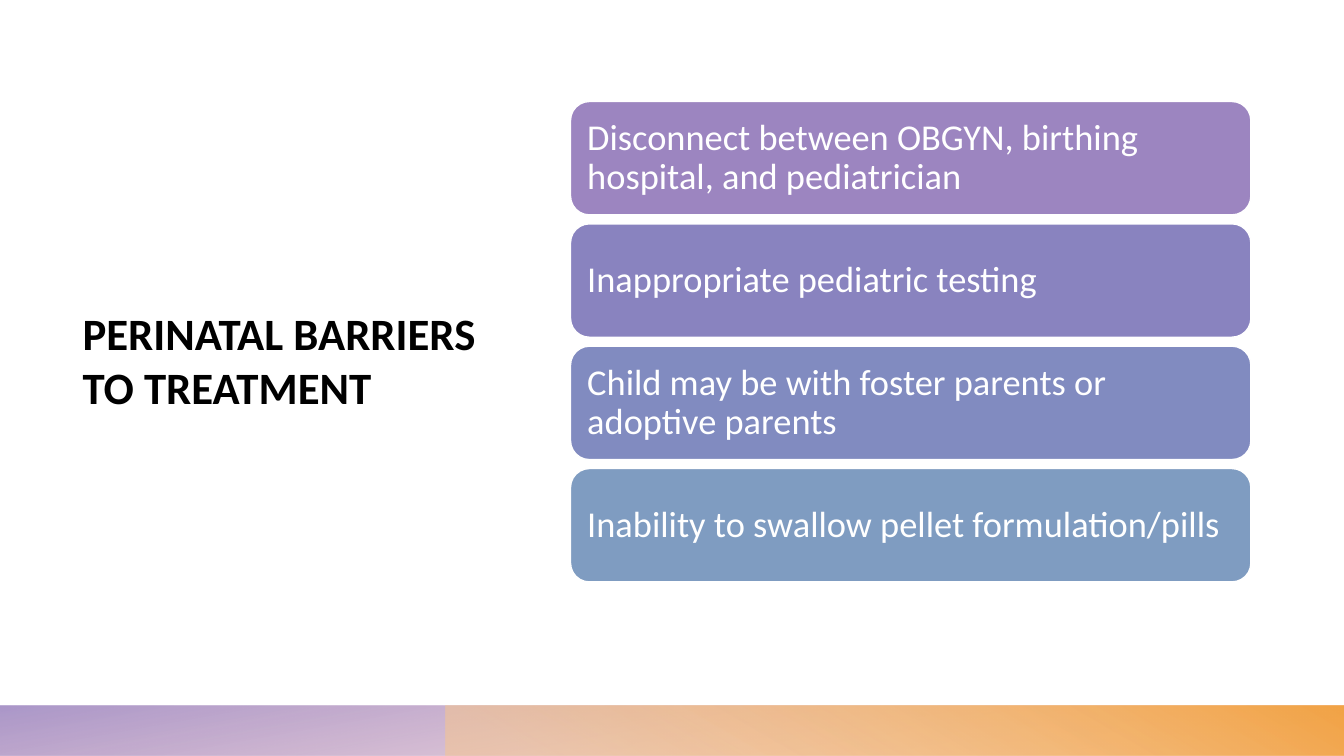
from lxml import etree
from pptx import Presentation
from pptx.dml.color import RGBColor
from pptx.enum.shapes import MSO_SHAPE
from pptx.enum.text import MSO_ANCHOR, MSO_AUTO_SIZE, PP_ALIGN
from pptx.oxml.ns import qn
from pptx.util import Pt

COLORS = {
    "black": "000000", "white": "FFFFFF",
    "pink": "D092A7", "purple": "9C85C0", "peach": "F8C78E", "orange": "F3A447",
    "violet": "8983BF", "periwinkle": "818BC0", "blue": "7F9CC1",
}


def write_text(frame, text, size, color, bold=False, inset=0, spacing=1.0):
    frame.word_wrap = True
    frame.auto_size = MSO_AUTO_SIZE.NONE
    frame.vertical_anchor = MSO_ANCHOR.MIDDLE
    frame.margin_left = frame.margin_right = Pt(inset)
    frame.margin_top = frame.margin_bottom = Pt(inset)
    paragraph = frame.paragraphs[0]
    paragraph.alignment = PP_ALIGN.LEFT
    paragraph.line_spacing = spacing
    run = paragraph.add_run()
    run.text = text
    run.font.name = "Calibri"
    run.font.size = Pt(size)
    run.font.bold = bold
    run.font.color.rgb = RGBColor.from_string(COLORS[color])


presentation = Presentation()
presentation.slide_width = Pt(960)
presentation.slide_height = Pt(540)
slide = presentation.slides.add_slide(presentation.slide_layouts[5])

footer_bands = [
    (0, 260, [(0, "pink", 28), (14, "pink", 28), (100, "purple", 85)]),
    (318, 300, [(0, "peach", 55), (9, "peach", 55), (99, "orange", 100), (100, "orange", 100)]),
]
for left, angle, stops in footer_bands:
    band = slide.shapes.add_shape(MSO_SHAPE.RECTANGLE, Pt(left), Pt(504), Pt(960 - left), Pt(36))
    band.shadow.inherit = False
    band.line.fill.background()
    band.fill.gradient()
    gradient = band.fill._xPr.find(qn("a:gradFill"))
    for child in list(gradient):
        gradient.remove(child)
    stop_list = etree.SubElement(gradient, qn("a:gsLst"))
    for position, color, opacity in stops:
        stop = etree.SubElement(stop_list, qn("a:gs"), pos=str(position * 1000))
        stop_color = etree.SubElement(stop, qn("a:srgbClr"), val=COLORS[color])
        etree.SubElement(stop_color, qn("a:alpha"), val=str(opacity * 1000))
    etree.SubElement(gradient, qn("a:lin"), ang=str(angle * 60000), scaled="0")

title = slide.shapes.title
title.left, title.top, title.width, title.height = Pt(59), Pt(80.6), Pt(323), Pt(352)
write_text(title.text_frame, "PERINATAL BARRIERS TO TREATMENT", size=32, color="black", bold=True)

barriers = [
    ("Disconnect between OBGYN, birthing hospital, and pediatrician", "purple"),
    ("Inappropriate pediatric testing", "violet"),
    ("Child may be with foster parents or adoptive parents", "periwinkle"),
    ("Inability to swallow pellet formulation/pills", "blue"),
]
for row, (barrier, color) in enumerate(barriers):
    card = slide.shapes.add_shape(
        MSO_SHAPE.ROUNDED_RECTANGLE, Pt(407.5), Pt(72.5 + 87.4 * row), Pt(486), Pt(81))
    card.shadow.inherit = False
    card.adjustments[0] = 0.167
    card.fill.solid()
    card.fill.fore_color.rgb = RGBColor.from_string(COLORS[color])
    card.line.color.rgb = RGBColor.from_string(COLORS["white"])
    card.line.width = Pt(1)
    write_text(card.text_frame, barrier, size=26, color="white", inset=8, spacing=0.9)

presentation.save("out.pptx")
